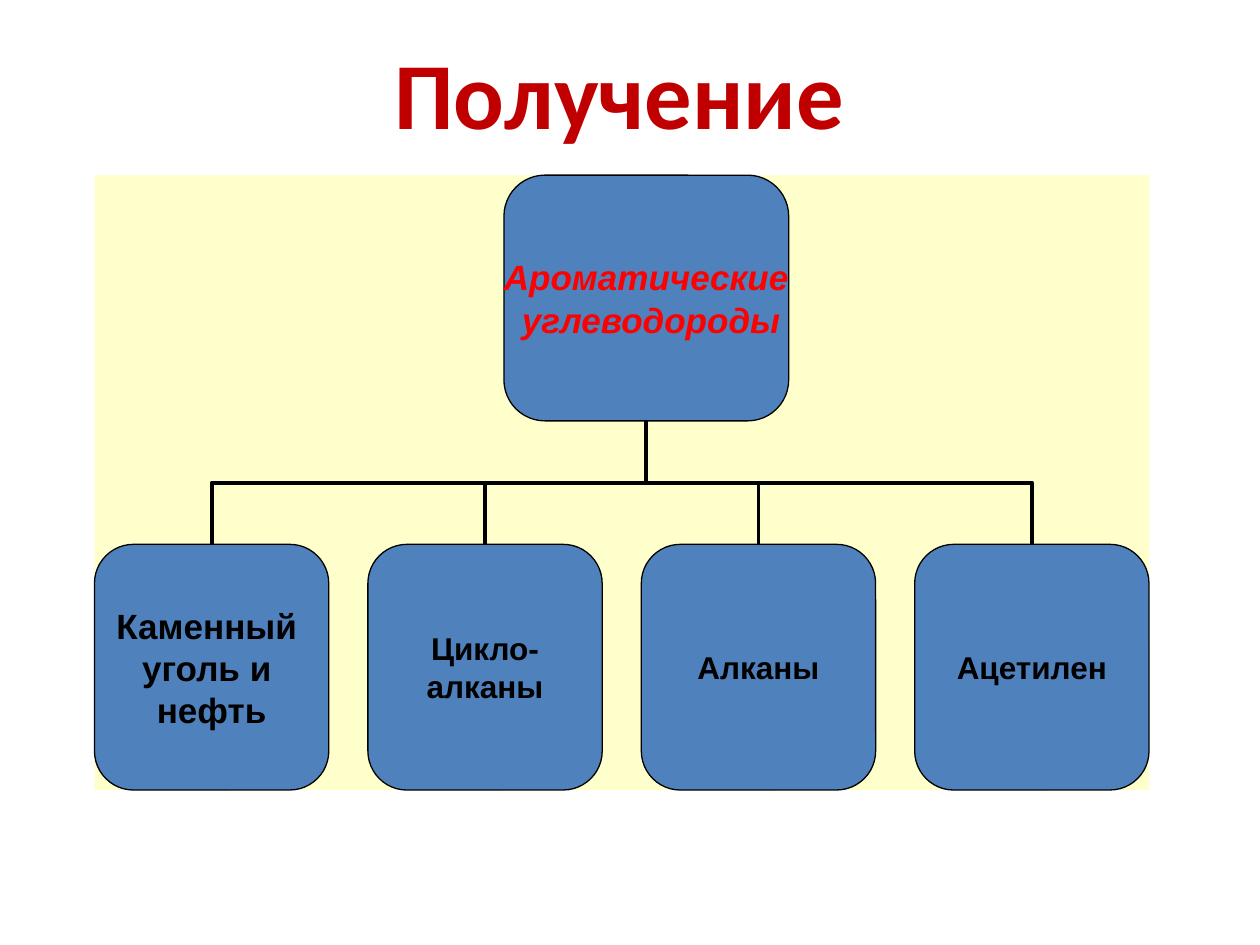
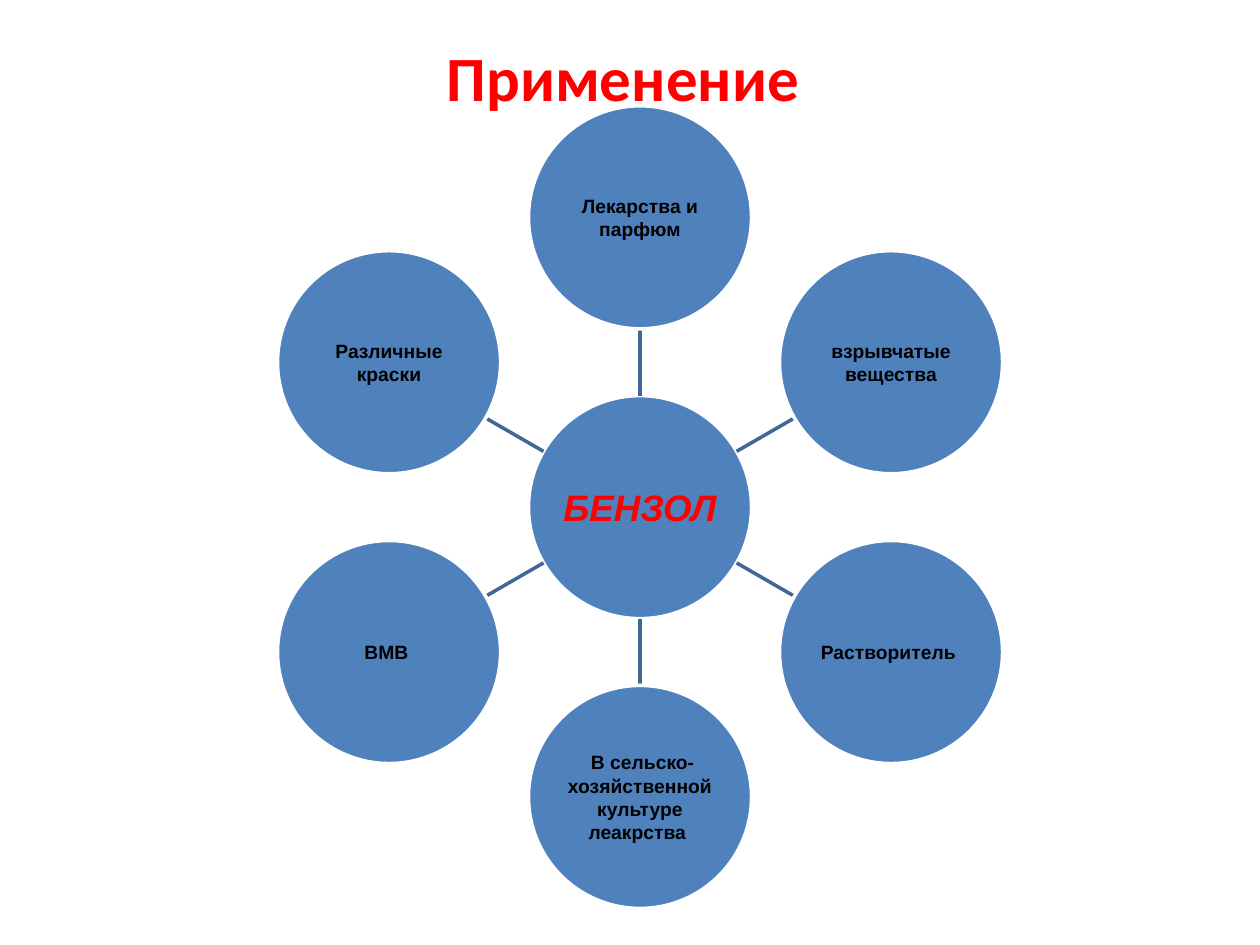
import dataclasses
import math

import lxml.etree
import pptx
import pptx.dml.color
import pptx.enum.shapes
import pptx.enum.text
import pptx.oxml.ns
import pptx.util

Inches = pptx.util.Inches
Pt = pptx.util.Pt
SHAPES = pptx.enum.shapes.MSO_SHAPE
CONNECTORS = pptx.enum.shapes.MSO_CONNECTOR


@dataclasses.dataclass(frozen=True)
class Theme:
    title_font: str = "Calibri"
    body_font: str = "Arial"
    node: str = "4F81BD"
    band: str = "FFFFCC"
    ink: str = "000000"
    paper: str = "FFFFFF"
    accent: str = "FF0000"
    deep_red: str = "C00000"
    spoke: str = "3F6797"
    large_title: int = 54
    small_title: int = 36
    hub: int = 21
    large_label: int = 20
    label: int = 18
    small_label: int = 11


THEME = Theme()


@dataclasses.dataclass(frozen=True)
class Box:
    left: float
    top: float
    width: float
    height: float

    @property
    def center_x(self):
        return self.left + self.width / 2

    @property
    def center_y(self):
        return self.top + self.height / 2

    @property
    def bottom(self):
        return self.top + self.height

    def lengths(self):
        return [Inches(side) for side in dataclasses.astuple(self)]


def rgb(color):
    return pptx.dml.color.RGBColor.from_string(color)


def write(frame, lines, font, size, color, italic=False, inset=None, wrap=True):
    frame.word_wrap = wrap
    frame.auto_size = pptx.enum.text.MSO_AUTO_SIZE.NONE
    frame.vertical_anchor = pptx.enum.text.MSO_ANCHOR.MIDDLE
    if inset is not None:
        frame.margin_left = frame.margin_right = Inches(inset)
        frame.margin_top = frame.margin_bottom = Inches(inset)
    for index, line in enumerate(lines):
        paragraph = frame.add_paragraph() if index else frame.paragraphs[0]
        paragraph.alignment = pptx.enum.text.PP_ALIGN.CENTER
        run = paragraph.add_run()
        run.text = line
        run.font.name = font
        run.font.size = Pt(size)
        run.font.bold = True
        run.font.italic = italic
        run.font.color.rgb = rgb(color)


def add_panel(slide, kind, box, fill, outline=None, weight=0.75):
    panel = slide.shapes.add_shape(kind, *box.lengths())
    panel.shadow.inherit = False
    panel.fill.solid()
    panel.fill.fore_color.rgb = rgb(fill)
    if outline:
        panel.line.color.rgb = rgb(outline)
        panel.line.width = Pt(weight)
    else:
        panel.line.fill.background()
    return panel


def add_link(slide, kind, start, end, color, weight):
    link = slide.shapes.add_connector(kind, *map(Inches, (*start, *end)))
    link.line.color.rgb = rgb(color)
    link.line.width = Pt(weight)
    properties = link._element.spPr
    lxml.etree.SubElement(properties, pptx.oxml.ns.qn("a:effectLst"))
    return link


def add_titled_slide(deck, title, box, size, color):
    slide = deck.slides.add_slide(deck.slide_layouts[5])
    heading = slide.shapes.title
    heading.left, heading.top, heading.width, heading.height = box.lengths()
    write(heading.text_frame, [title], THEME.title_font, size, color)
    return slide


def add_branch(slide, parent, child):
    rise = child.top - parent.bottom
    run = child.center_x - parent.center_x
    middle_x = (child.center_x + parent.center_x) / 2
    middle_y = (child.top + parent.bottom) / 2
    branch = add_link(
        slide,
        CONNECTORS.ELBOW,
        (middle_x - rise / 2, middle_y + run / 2),
        (middle_x + rise / 2, middle_y - run / 2),
        THEME.ink,
        2.25,
    )
    branch._element.spPr.find(pptx.oxml.ns.qn("a:xfrm")).set("rot", str(270 * 60000))


def add_tree_node(slide, box, lines, size, color, italic=False):
    node = add_panel(slide, SHAPES.ROUNDED_RECTANGLE, box, THEME.node, THEME.ink)
    write(node.text_frame, lines, THEME.body_font, size, color, italic, 0, False)


def add_tree(slide, box, product, sources):
    add_panel(slide, SHAPES.RECTANGLE, box, THEME.band)
    node_width, node_height = 1.86, 1.95
    step = (box.width - node_width) / (len(sources) - 1)
    product_box = Box(box.left + 3.25, box.top, 2.26, node_height)
    source_boxes = [
        Box(box.left + index * step, box.bottom - node_height, node_width, node_height)
        for index in range(len(sources))
    ]
    for source_box in source_boxes:
        add_branch(slide, product_box, source_box)
    add_tree_node(slide, product_box, product, THEME.large_label, THEME.accent, True)
    for source_box, (lines, size) in zip(source_boxes, sources):
        add_tree_node(slide, source_box, lines, size, THEME.ink)


def add_disc(slide, center, diameter, text, size, color, italic=False):
    x, y = center
    box = Box(x - diameter / 2, y - diameter / 2, diameter, diameter)
    disc = add_panel(slide, SHAPES.OVAL, box, THEME.node, THEME.paper, 2)
    write(disc.text_frame, [text], THEME.body_font, size, color, italic, 0.01)


def add_wheel(slide, box, hub, uses):
    diameter = 1.77
    orbit = (box.height - diameter) / 2

    def point(angle, distance):
        return (
            box.center_x + distance * math.sin(angle),
            box.center_y - distance * math.cos(angle),
        )

    add_disc(slide, point(0, 0), diameter, hub, THEME.hub, THEME.accent, True)
    for index, use in enumerate(uses):
        angle = 2 * math.pi * index / len(uses)
        add_link(
            slide,
            CONNECTORS.STRAIGHT,
            point(angle, diameter / 2),
            point(angle, orbit - diameter / 2),
            THEME.spoke,
            2,
        )
        add_disc(slide, point(angle, orbit), diameter, use, THEME.small_label, THEME.ink)


def build_production(deck):
    slide = add_titled_slide(
        deck, "Получение ", Box(0.5, 0.3, 9, 0.85), THEME.large_title, THEME.deep_red
    )
    sources = [
        (["Каменный ", "уголь и ", "нефть"], THEME.large_label),
        (["Цикло-", "алканы"], THEME.label),
        (["Алканы"], THEME.label),
        (["Ацетилен"], THEME.label),
    ]
    product = ["Ароматические", " углеводороды"]
    add_tree(slide, Box(0.75, 1.39, 8.37, 4.88), product, sources)


def build_uses(deck):
    slide = add_titled_slide(
        deck, "Применение ", Box(0.5, 0.3, 9, 0.61), THEME.small_title, THEME.accent
    )
    uses = [
        "Лекарства и парфюм",
        "взрывчатые вещества",
        "Растворитель ",
        " В сельско-хозяйственной культуре леакрства ",
        "ВМВ ",
        "Различные краски",
    ]
    add_wheel(slide, Box(2.2, 0.84, 5.76, 6.37), "БЕНЗОЛ", uses)


def main():
    deck = pptx.Presentation()
    deck.slide_width, deck.slide_height = Inches(10), Inches(7.5)
    build_production(deck)
    build_uses(deck)
    deck.save("out.pptx")


if __name__ == "__main__":
    main()
